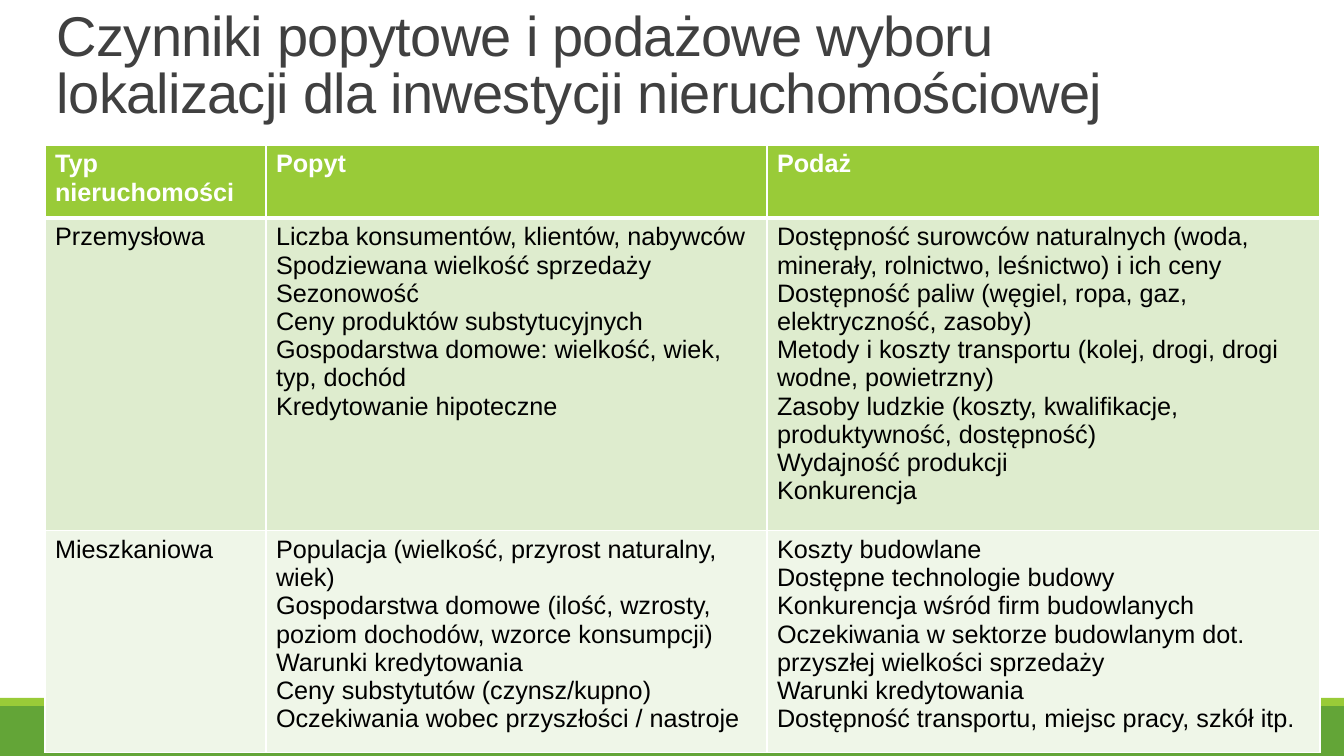
from lxml import etree
from pptx import Presentation
from pptx.dml.color import RGBColor
from pptx.enum.shapes import MSO_SHAPE
from pptx.enum.text import MSO_ANCHOR
from pptx.oxml.ns import qn
from pptx.util import Pt

TITLE = "Czynniki popytowe i podażowe wyboru lokalizacji dla inwestycji nieruchomościowej"
HEADER = (["Typ nieruchomości"], ["Popyt"], ["Podaż"])
INDUSTRIAL = (
    ["Przemysłowa"],
    ["Liczba konsumentów, klientów, nabywców",
     "Spodziewana wielkość sprzedaży",
     "Sezonowość",
     "Ceny produktów substytucyjnych",
     "Gospodarstwa domowe: wielkość, wiek, typ, dochód",
     "Kredytowanie hipoteczne"],
    ["Dostępność surowców naturalnych (woda, minerały, rolnictwo, leśnictwo) i ich ceny",
     "Dostępność paliw (węgiel, ropa, gaz, elektryczność, zasoby)",
     "Metody i koszty transportu (kolej, drogi, drogi wodne, powietrzny)",
     "Zasoby ludzkie (koszty, kwalifikacje, produktywność, dostępność)",
     "Wydajność produkcji",
     "Konkurencja"],
)
RESIDENTIAL = (
    ["Mieszkaniowa"],
    ["Populacja (wielkość, przyrost naturalny, wiek)",
     "Gospodarstwa domowe (ilość, wzrosty, poziom dochodów, wzorce konsumpcji)",
     "Warunki kredytowania",
     "Ceny substytutów (czynsz/kupno)",
     "Oczekiwania wobec przyszłości / nastroje"],
    ["Koszty budowlane",
     "Dostępne technologie budowy",
     "Konkurencja wśród firm budowlanych",
     "Oczekiwania w sektorze budowlanym dot. przyszłej wielkości sprzedaży",
     "Warunki kredytowania",
     "Dostępność transportu, miejsc pracy, szkół itp."],
)

WHITE = RGBColor(0xFF, 0xFF, 0xFF)
BLACK = RGBColor(0x00, 0x00, 0x00)
GREY = RGBColor(0x40, 0x40, 0x40)
GREEN = RGBColor(0x63, 0xA5, 0x37)
LIME = RGBColor(0x99, 0xCB, 0x38)
PALE = RGBColor(0xDE, 0xEC, 0xCE)
PALEST = RGBColor(0xEF, 0xF6, 0xE8)

# factors, row height, fill, text colour, bold, width of the line below
ROWS = (
    (HEADER, 73, LIME, WHITE, True, 3),
    (INDUSTRIAL, 292, PALE, BLACK, False, 1),
    (RESIDENTIAL, 208, PALEST, BLACK, False, 1),
)
COLUMN_WIDTHS = (221, 501, 553)

SLIDE_W, SLIDE_H = 1344, 756
FOOTER_BANDS = ((706, 50, GREEN), (698, 8, LIME))
TABLE_X, TABLE_Y = 45, 145
RECTANGLE = MSO_SHAPE.RECTANGLE
BOTTOM = MSO_ANCHOR.BOTTOM


def px(*lengths):
    return [round(length * 914400 / 100.8) for length in lengths]


def write(frame, lines, size, color, bold=False, line_spacing=None, tracking=None):
    for index, line in enumerate(lines):
        paragraph = frame.add_paragraph() if index else frame.paragraphs[0]
        if line_spacing:
            paragraph.line_spacing = line_spacing
        run = paragraph.add_run()
        run.text = line
        run.font.name = "Arial"
        run.font.size = Pt(size)
        run.font.bold = bold
        run.font.color.rgb = color
        if tracking:
            run.font._element.set("spc", str(round(tracking * 100)))


def draw_borders(cell, top, bottom):
    """Rule all four sides in white, widths in points."""
    properties = cell._tc.get_or_add_tcPr()
    for side, width in (("L", 1), ("R", 1), ("T", top), ("B", bottom)):
        line = etree.SubElement(properties, qn(f"a:ln{side}"), w=str(Pt(width)))
        fill = etree.SubElement(line, qn("a:solidFill"))
        etree.SubElement(fill, qn("a:srgbClr"), val=str(WHITE))


def add_footer(slide):
    for top, height, color in FOOTER_BANDS:
        band = slide.shapes.add_shape(RECTANGLE, *px(0, top, SLIDE_W, height))
        band.shadow.inherit = False
        band.fill.solid()
        band.fill.fore_color.rgb = color
        band.line.fill.background()


def add_title(slide):
    frame = slide.shapes.add_textbox(*px(47, 0, 1109, 130)).text_frame
    frame.word_wrap = True
    frame.vertical_anchor = BOTTOM
    write(frame, [TITLE], size=40, color=GREY, line_spacing=0.85, tracking=-0.5)


def add_factor_table(slide):
    width, height = sum(COLUMN_WIDTHS), sum(row[1] for row in ROWS)
    table = slide.shapes.add_table(
        len(ROWS), len(COLUMN_WIDTHS), *px(TABLE_X, TABLE_Y, width, height)).table
    for column, column_width in zip(table.columns, px(*COLUMN_WIDTHS)):
        column.width = column_width
    line_above = 1
    for row, (factors, row_height, fill, color, bold, line_below) in zip(table.rows, ROWS):
        row.height = px(row_height)[0]
        for cell, lines in zip(row.cells, factors):
            draw_borders(cell, line_above, line_below)
            cell.fill.solid()
            cell.fill.fore_color.rgb = fill
            write(cell.text_frame, lines, size=18, color=color, bold=bold)
        line_above = line_below


def main():
    deck = Presentation()
    deck.slide_width, deck.slide_height = px(SLIDE_W, SLIDE_H)
    slide = deck.slides.add_slide(deck.slide_layouts[6])
    add_footer(slide)
    add_title(slide)
    add_factor_table(slide)
    deck.save("out.pptx")


if __name__ == "__main__":
    main()
